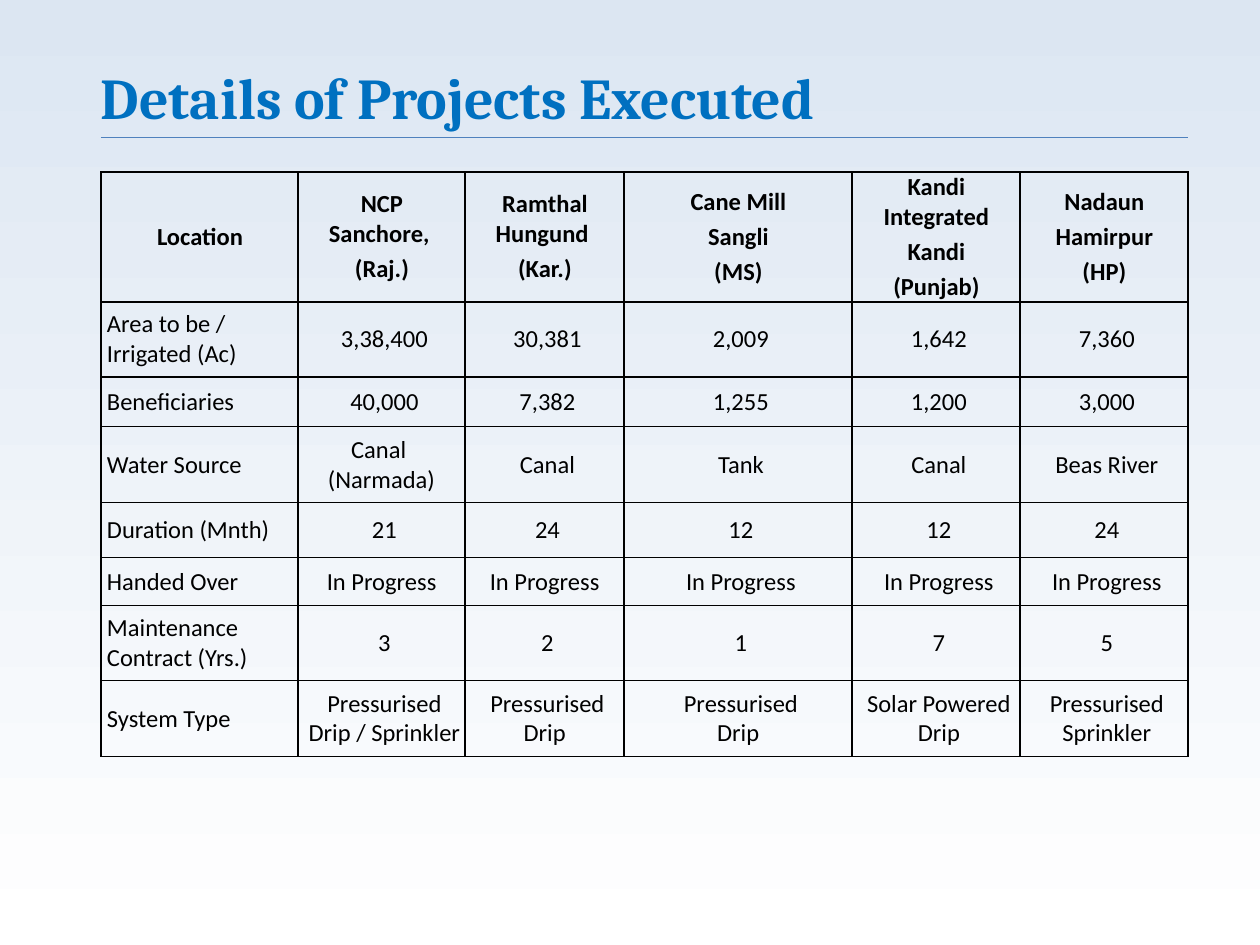
from dataclasses import dataclass

from lxml import etree
from pptx import Presentation
from pptx import util as u
from pptx.dml.color import RGBColor
from pptx.enum import shapes, text
from pptx.oxml import ns

PX = u.Inches(1) / 126
BLACK = RGBColor(0x00, 0x00, 0x00)
TITLE_BLUE = RGBColor(0x00, 0x70, 0xC0)
RULE_BLUE = RGBColor(0x4F, 0x81, 0xBD)
SKY = RGBColor(0xDC, 0xE6, 0xF2)
WHITE = RGBColor(0xFF, 0xFF, 0xFF)

LEFT, TABLE_TOP, RULE_Y = 101, 172, 137
COLUMN_WIDTHS = [197, 167, 159, 228, 168, 168]
HEADER_HEIGHT, HEADER_INSET, BODY_INSET = 126, 1, 6


@dataclass(frozen=True)
class Heading:
    text: str
    gaps: tuple[int, ...] = (0, 3, 3)  # points before each paragraph


@dataclass(frozen=True)
class Record:
    height: int
    label: str
    values: tuple[str, ...]


# In cell text, \n starts a paragraph and \v breaks a line
HEADINGS = [
    Heading("Location"),
    Heading("NCP\nSanchore, \n(Raj.)", (0, 0, 3)),
    Heading("Ramthal\nHungund \n(Kar.)", (0, 0, 3)),
    Heading("Cane Mill\nSangli\n(MS)"),
    Heading("Kandi Integrated\nKandi\n(Punjab)"),
    Heading("Nadaun\nHamirpur\n(HP)"),
]
RECORDS = [
    Record(75, "Area to be / \vIrrigated (Ac)",
           ("3,38,400", "30,381", "2,009", "1,642", "7,360")),
    Record(50, "Beneficiaries", ("40,000", "7,382", "1,255", "1,200", "3,000")),
    Record(76, "Water Source",
           ("Canal \v(Narmada)", "Canal", "Tank", "Canal", "Beas River")),
    Record(55, "Duration (Mnth)", ("21", "24", "12", "12", "24")),
    Record(48, "Handed Over",
           ("In Progress ", "In Progress ") + ("In Progress",) * 3),
    Record(75, "Maintenance \vContract (Yrs.)", ("3", "2", "1", "7", "5")),
    Record(76, "System Type",
           ("Pressurised\nDrip / Sprinkler", "Pressurised\nDrip ",
            "Pressurised\nDrip ", "Solar Powered\nDrip",
            "Pressurised\nSprinkler")),
]
FLUSH_VALUES = {"Canal \v(Narmada)"}  # values set without a left inset


def px(length: int) -> u.Emu:
    return u.Emu(round(length * PX))


def style_font(font, name: str, size: int, color: RGBColor, bold: bool) -> None:
    font.name, font.size, font.bold = name, u.Pt(size), bold
    font.color.rgb = color


def add_borders(cell) -> None:
    properties = cell._tc.get_or_add_tcPr()
    for side in ("lnL", "lnR", "lnT", "lnB"):
        line = etree.SubElement(properties, ns.qn(f"a:{side}"), w=str(u.Pt(1)))
        fill = etree.SubElement(line, ns.qn("a:solidFill"))
        etree.SubElement(fill, ns.qn("a:srgbClr"), val=str(BLACK))


def fill_cell(cell, content: str, inset: int, centred: bool = True,
              bold: bool = False, gaps: tuple[int, ...] = (0, 0)) -> None:
    add_borders(cell)
    cell.fill.background()
    cell.vertical_anchor = text.MSO_ANCHOR.MIDDLE
    cell.margin_left = px(inset)
    cell.margin_top = cell.margin_right = cell.margin_bottom = 0
    cell.text_frame.text = content
    for para, gap in zip(cell.text_frame.paragraphs, gaps):
        para.alignment = text.PP_ALIGN.CENTER if centred else text.PP_ALIGN.LEFT
        para.space_before = u.Pt(gap)
        style_font(para.font, "Calibri", 14, BLACK, bold)


def add_background(page) -> None:
    fill = page.background.fill
    fill.gradient()
    fill.gradient_angle = 270
    for stop, color, position in zip(fill.gradient_stops, (SKY, WHITE), (0, 1)):
        stop.color.rgb = color
        stop.position = position


def add_title(page) -> None:
    box = page.shapes.add_textbox(px(LEFT), px(62), px(1072), px(77))
    frame = box.text_frame
    frame.word_wrap = True
    frame.vertical_anchor = text.MSO_ANCHOR.MIDDLE
    frame.margin_left = frame.margin_top = 0
    frame.margin_right = frame.margin_bottom = 0
    para = frame.paragraphs[0]
    para.text = "Details of Projects Executed"
    para.line_spacing = 0.9
    style_font(para.font, "Cambria", 33, TITLE_BLUE, True)


def add_rule(page) -> None:
    right = LEFT + sum(COLUMN_WIDTHS)
    rule = page.shapes.add_connector(shapes.MSO_CONNECTOR.STRAIGHT, px(LEFT),
                                     px(RULE_Y), px(right), px(RULE_Y))
    rule.line.color.rgb = RULE_BLUE
    rule.line.width = u.Pt(0.5)
    etree.SubElement(rule._element.spPr, ns.qn("a:effectLst"))


def add_project_table(page) -> None:
    heights = [HEADER_HEIGHT] + [record.height for record in RECORDS]
    table = page.shapes.add_table(
        len(heights), len(COLUMN_WIDTHS), px(LEFT), px(TABLE_TOP),
        px(sum(COLUMN_WIDTHS)), px(sum(heights))).table
    table.first_row = table.horz_banding = False
    for column, width in zip(table.columns, COLUMN_WIDTHS):
        column.width = px(width)
    for row, height in zip(table.rows, heights):
        row.height = px(height)

    # Header row
    for cell, heading in zip(table.rows[0].cells, HEADINGS):
        fill_cell(cell, heading.text, HEADER_INSET, bold=True, gaps=heading.gaps)

    # One row per record: label, then one value per project
    for index, record in enumerate(RECORDS, start=1):
        fill_cell(table.cell(index, 0), record.label, BODY_INSET, centred=False)
        for column, value in enumerate(record.values, start=1):
            inset = 0 if value in FLUSH_VALUES else BODY_INSET
            fill_cell(table.cell(index, column), value, inset)


def main() -> None:
    deck = Presentation()
    deck.slide_width, deck.slide_height = px(1260), px(945)
    page = deck.slides.add_slide(deck.slide_layouts[6])
    add_background(page)
    add_rule(page)
    add_project_table(page)
    add_title(page)
    deck.save("out.pptx")


if __name__ == "__main__":
    main()
